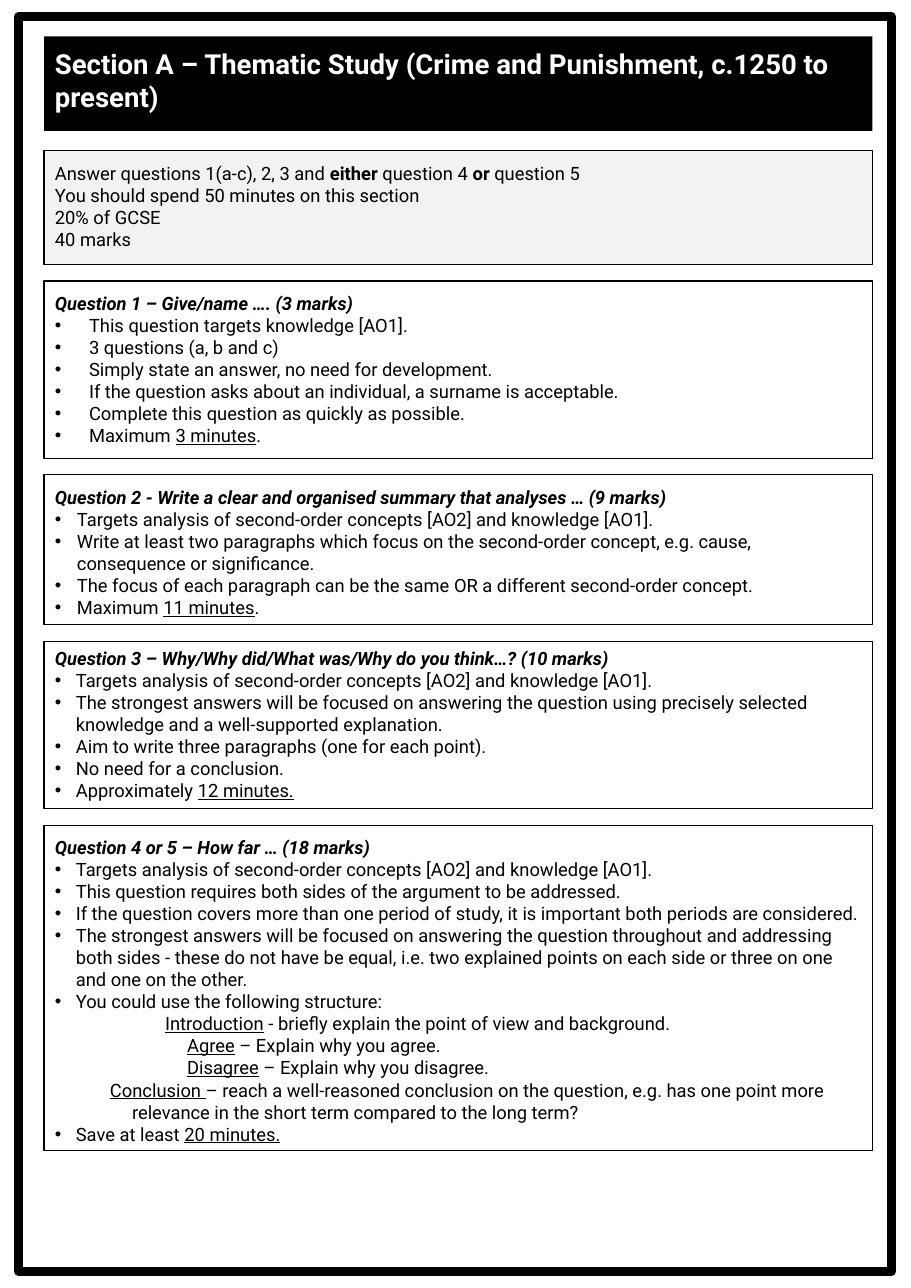
import pptx
import pptx.dml.color
import pptx.enum.shapes
import pptx.enum.text
import pptx.util
from pptx.oxml.ns import qn

BLACK = pptx.dml.color.RGBColor(0x00, 0x00, 0x00)
WHITE = pptx.dml.color.RGBColor(0xFF, 0xFF, 0xFF)
PALE_GREY = pptx.dml.color.RGBColor(0xF2, 0xF2, 0xF2)

# Grid: ten columns or rows to the inch
LEFT, WIDTH = 4, 75.2
FIRST_PANEL_TOP, PANEL_GAP = 13.7, 1.5


def cells(count):
    return pptx.util.Inches(count / 10)


class GuideSheet:
    font_name = "Roboto"
    body_size = 12

    def __init__(self, presentation):
        self.slide = presentation.slides.add_slide(presentation.slide_layouts[6])

    def box(self, left, top, width, height, fill=None, line=None):
        shape = self.slide.shapes.add_shape(
            pptx.enum.shapes.MSO_SHAPE.RECTANGLE,
            cells(left), cells(top), cells(width), cells(height))
        shape.shadow.inherit = False
        if fill is None:
            shape.fill.background()
        else:
            shape.fill.solid()
            shape.fill.fore_color.rgb = fill
        if line is None:
            shape.line.fill.background()
        else:
            shape.line.color.rgb = BLACK
            shape.line.width = pptx.util.Pt(line)
        return shape

    def frame_text(self, shape, padding=1):
        frame = shape.text_frame
        frame.word_wrap = True
        frame.vertical_anchor = pptx.enum.text.MSO_ANCHOR.TOP
        frame.margin_left = frame.margin_right = cells(1)
        frame.margin_top = frame.margin_bottom = cells(padding)
        return frame

    def add_words(self, paragraph, text, size=body_size, color=BLACK, bold=False, italic=False):
        """Text between * is bold, text between _ is underlined."""
        paragraph.alignment = pptx.enum.text.PP_ALIGN.LEFT
        for i, stretch in enumerate(text.split("*")):
            for j, piece in enumerate(stretch.split("_")):
                if not piece:
                    continue
                run = paragraph.add_run()
                run.text = piece
                run.font.name = self.font_name
                run.font.size = pptx.util.Pt(size)
                run.font.color.rgb = color
                run.font.bold = bold or i % 2 == 1
                run.font.italic = italic
                run.font.underline = j % 2 == 1

    def indent(self, paragraph, margin, hanging, bullet=False):
        properties = paragraph._p.get_or_add_pPr()
        properties.set("marL", str(cells(margin)))
        properties.set("indent", str(-cells(hanging)))
        if bullet:
            font = properties.makeelement(qn("a:buFont"), {"typeface": "Arial"})
            mark = properties.makeelement(qn("a:buChar"), {"char": "•"})
            properties.extend([font, mark])

    def title(self, top, height, text):
        banner = self.box(LEFT, top, WIDTH, height, fill=BLACK)
        heading = self.frame_text(banner).paragraphs[0]
        self.add_words(heading, text, size=18, color=WHITE, bold=True)

    def summary(self, top, height, lines):
        frame = self.frame_text(self.box(LEFT, top, WIDTH, height, PALE_GREY, 0.75))
        for number, line in enumerate(lines):
            paragraph = frame.add_paragraph() if number else frame.paragraphs[0]
            self.add_words(paragraph, line)

    def question(self, top, height, heading, points, bullet_indent, padding=1):
        """A point is a bullet, or (text, margin, hanging) for a plain indented line."""
        frame = self.frame_text(self.box(LEFT, top, WIDTH, height, line=0.75), padding)
        self.add_words(frame.paragraphs[0], heading, bold=True, italic=True)
        for point in points:
            paragraph = frame.add_paragraph()
            if isinstance(point, str):
                self.indent(paragraph, bullet_indent, bullet_indent, bullet=True)
                self.add_words(paragraph, point)
            else:
                text, margin, hanging = point
                self.indent(paragraph, margin, hanging)
                self.add_words(paragraph, text)


TARGETS = "Targets analysis of second-order concepts [AO2] and knowledge [AO1]."

SUMMARY_HEIGHT = 10.3
SUMMARY = [
    "Answer questions 1(a-c), 2, 3 and *either* question 4 *or *question 5",
    "You should spend 50 minutes on this section",
    "20% of GCSE",
    "40 marks",
]

# Height, heading, points, bullet indent, padding above and below
QUESTIONS = [
    (16.1, "Question 1 – Give/name …. (3 marks)", [
        "This question targets knowledge [AO1].",
        "3 questions (a, b and c)",
        "Simply state an answer, no need for development.",
        "If the question asks about an individual, a surname is acceptable.",
        "Complete this question as quickly as possible.",
        "Maximum _3 minutes_.",
    ], 3.1, 1),
    (13.6, "Question 2 - Write a clear and organised summary that analyses … (9 marks)", [
        TARGETS,
        "Write at least two paragraphs which focus on the second-order concept, "
        "e.g. cause, consequence or significance.",
        "The focus of each paragraph can be the same OR a different second-order concept.",
        "Maximum _11 minutes_.",
    ], 2, 1),
    (15.2, "Question 3 – Why/Why did/What was/Why do you think…? (10 marks)", [
        TARGETS,
        "The strongest answers will be focused on answering the question using "
        "precisely selected knowledge and a well-supported explanation.",
        "Aim to write three paragraphs (one for each point).",
        "No need for a conclusion.",
        "Approximately _12 minutes._",
    ], 1.9, 0.5),
    (29.5, "Question 4 or 5 – How far … (18 marks)", [
        TARGETS,
        "This question requires both sides of the argument to be addressed.",
        "If the question covers more than one period of study, it is important "
        "both periods are considered.",
        "The strongest answers will be focused on answering the question throughout "
        "and addressing both sides - these do not have be equal, i.e. two explained "
        "points on each side or three on one and one on the other.",
        "You could use the following structure:",
        ("_Introduction_ - briefly explain the point of view and background.", 10, 0),
        ("_Agree_ – Explain why you agree.", 12, 0),
        ("_Disagree_ – Explain why you disagree.", 12, 0),
        ("_Conclusion _– reach a well-reasoned conclusion on the question, e.g. has one "
         "point more relevance in the short term compared to the long term?", 7, 2),
        "Save at least _20 minutes._",
    ], 1.9, 1),
]


def main():
    presentation = pptx.Presentation()
    presentation.slide_width = cells(82.7)
    presentation.slide_height = cells(116.9)
    sheet = GuideSheet(presentation)

    # Page border and title
    sheet.box(1.7, 1.5, 79.2, 113.9, WHITE, 6)
    sheet.title(3.3, 8.6, "Section A – Thematic Study (Crime and Punishment, c.1250 to present)")

    # Section summary
    top = FIRST_PANEL_TOP
    sheet.summary(top, SUMMARY_HEIGHT, SUMMARY)
    top += SUMMARY_HEIGHT + PANEL_GAP

    # Question panels, stacked down the page
    for height, heading, points, bullet_indent, padding in QUESTIONS:
        sheet.question(top, height, heading, points, bullet_indent, padding)
        top += height + PANEL_GAP

    presentation.save("out.pptx")


if __name__ == "__main__":
    main()
